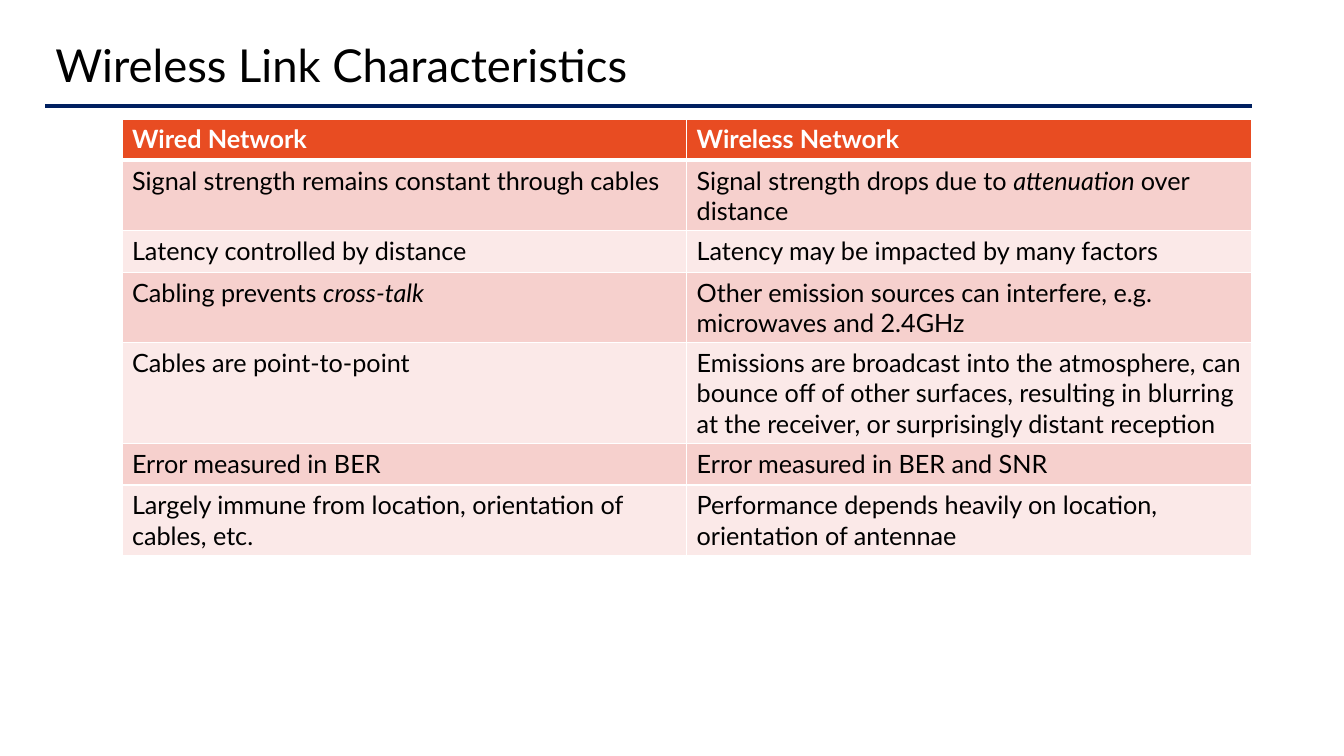
from lxml import etree
from pptx import Presentation
from pptx.dml.color import RGBColor
from pptx.enum.shapes import MSO_CONNECTOR
from pptx.enum.text import MSO_ANCHOR, MSO_AUTO_SIZE, PP_ALIGN
from pptx.oxml import parse_xml
from pptx.oxml.ns import nsdecls, qn
from pptx.util import Pt

PX = 9144
BLACK = RGBColor(0x00, 0x00, 0x00)
WHITE = RGBColor(0xFF, 0xFF, 0xFF)
NAVY = RGBColor(0x00, 0x20, 0x60)
ORANGE = RGBColor(0xE8, 0x4C, 0x22)
ROSE = RGBColor(0xF6, 0xD0, 0xCD)
PALE_ROSE = RGBColor(0xFB, 0xE9, 0xE8)

ROWS = [
    ("Wired Network", "Wireless Network"),
    ("Signal strength remains constant through cables",
     "Signal strength drops due to *attenuation *over distance"),
    ("Latency controlled by distance", "Latency may be impacted by many factors"),
    ("Cabling prevents *cross-talk*",
     "Other emission sources can interfere, e.g. microwaves and 2.4GHz"),
    ("Cables are point-to-point",
     "Emissions are broadcast into the atmosphere, can bounce off of other surfaces, "
     "resulting in blurring at the receiver, or surprisingly distant reception"),
    ("Error measured in BER", "Error measured in BER and SNR"),
    ("Largely immune from location, orientation of cables, etc.",
     "Performance depends heavily on location, orientation of antennae"),
]


def write(tf, text, size=18, color=BLACK, bold=False, font="Lato", spacing=None):
    p = tf.paragraphs[0]
    p.alignment = PP_ALIGN.LEFT
    p.line_spacing = spacing
    for i, part in enumerate(text.split("*")):
        if part:
            r = p.add_run()
            r.text = part
            r.font.name = font
            r.font.size = Pt(size)
            r.font.color.rgb = color
            r.font.bold = bold
            r.font.italic = i % 2 == 1


class Deck:
    def __init__(self, width, height):
        self.prs = Presentation()
        self.prs.slide_width = width * PX
        self.prs.slide_height = height * PX
        self.s = self.prs.slides.add_slide(self.prs.slide_layouts[5])

    def title(self, text, x, y, w, h):
        sp = self.s.shapes.title
        sp.left, sp.top, sp.width, sp.height = (v * PX for v in (x, y, w, h))
        tf = sp.text_frame
        tf.word_wrap = True
        tf.auto_size = MSO_AUTO_SIZE.NONE
        tf.vertical_anchor = MSO_ANCHOR.MIDDLE
        write(tf, text, size=32.4, spacing=0.9)

    def rule(self, x1, x2, y):
        cxn = self.s.shapes.add_connector(
            MSO_CONNECTOR.STRAIGHT, x1 * PX, y * PX, x2 * PX, y * PX)
        cxn.line.color.rgb = NAVY
        cxn.line.width = Pt(2.5)
        etree.SubElement(cxn._element.spPr, qn("a:effectLst"))

    def borders(self, cell, top, bottom):
        tc_pr = cell._tc.get_or_add_tcPr()
        widths = {"lnL": 1, "lnR": 1, "lnT": top, "lnB": bottom}
        for i, (tag, width) in enumerate(widths.items()):
            tc_pr.insert(i, parse_xml(
                f'<a:{tag} {nsdecls("a")} w="{Pt(width)}"><a:solidFill>'
                f'<a:srgbClr val="{WHITE}"/></a:solidFill></a:{tag}>'))

    def table(self, rows, x, y, col_width, row_height):
        cols = len(rows[0])
        table = self.s.shapes.add_table(
            len(rows), cols, x * PX, y * PX,
            cols * col_width * PX, len(rows) * row_height * PX).table
        for i, texts in enumerate(rows):
            header = i == 0
            fill = ORANGE if header else ROSE if i % 2 else PALE_ROSE
            for j, text in enumerate(texts):
                cell = table.cell(i, j)
                cell.fill.solid()
                cell.fill.fore_color.rgb = fill
                self.borders(cell, top=3 if i == 1 else 1, bottom=3 if header else 1)
                write(cell.text_frame, text,
                      color=WHITE if header else BLACK, bold=header)


def main():
    deck = Deck(1333, 750)
    deck.rule(45, 1242, 105)
    deck.title("Wireless Link Characteristics", 45, 40, 1197, 54)
    deck.table(ROWS, 121, 118, col_width=560, row_height=41)
    deck.prs.save("out.pptx")


if __name__ == "__main__":
    main()
